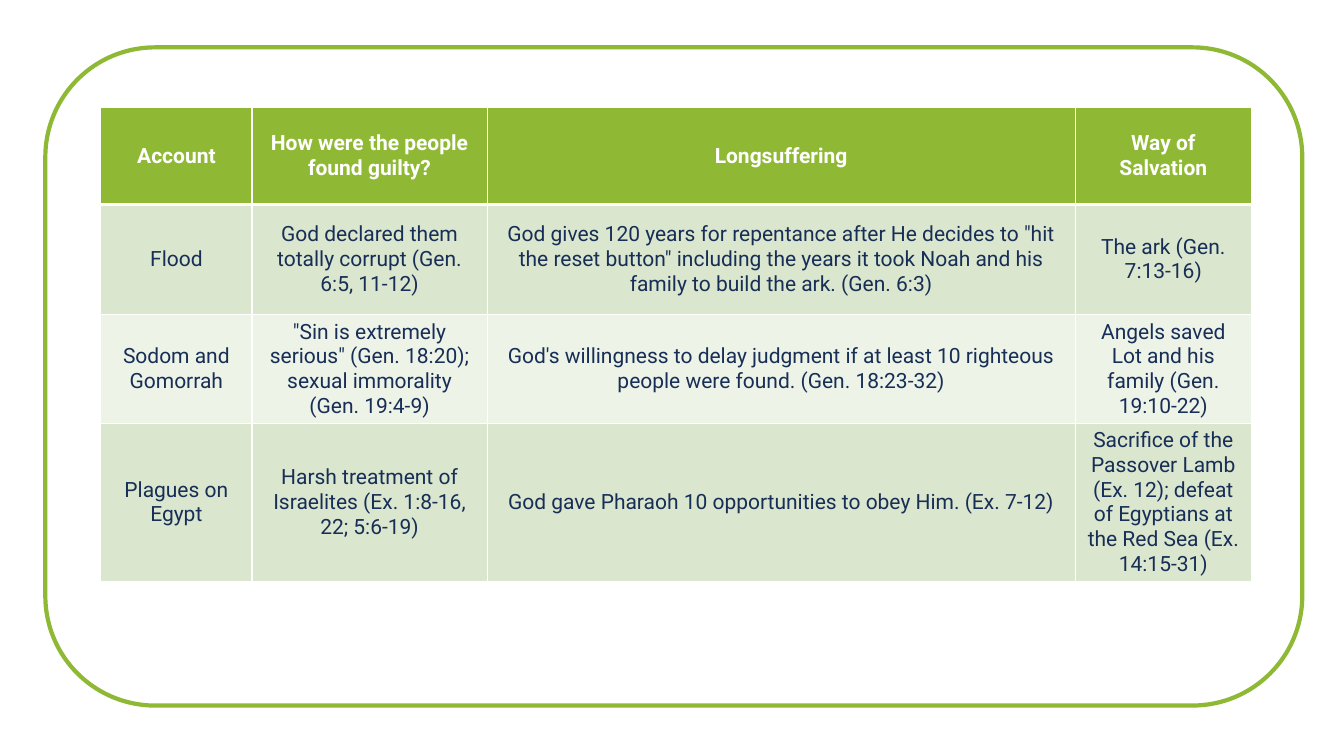
from dataclasses import dataclass

from lxml.etree import SubElement
from pptx import Presentation
from pptx.dml.color import RGBColor
from pptx.enum.shapes import MSO_SHAPE
from pptx.enum.text import MSO_ANCHOR, PP_ALIGN
from pptx.oxml.ns import qn
from pptx.util import Inches, Length, Pt

GREEN, NAVY, WHITE = "8FB935", "172E56", "FFFFFF"
SAGE, MIST = "DBE6CE", "EEF3E8"
FONT, SIZE = "Roboto", 15
COLS = (18, 28, 70, 21)


@dataclass(frozen=True)
class Row:
    height: float
    fill: str
    texts: tuple[str, ...]
    color: str = NAVY
    bold: bool = False
    gap: int = 0
    top: int = 1
    bottom: int = 1


ROWS = (
    Row(11.5, GREEN, (
        "Account",
        "How were the people found guilty?",
        "Longsuffering",
        "Way of Salvation",
    ), color=WHITE, bold=True, bottom=3),
    Row(13.1, SAGE, (
        "Flood",
        "God declared them totally corrupt (Gen. 6:5, 11-12)",
        'God gives 120 years for repentance after He decides to "hit the reset button" '
        "including the years it took Noah and his family to build the ark. (Gen. 6:3)",
        "The ark (Gen. 7:13-16)",
    ), gap=6, top=3),
    Row(10.2, MIST, (
        "Sodom and Gomorrah",
        '"Sin is extremely serious" (Gen. 18:20); sexual immorality (Gen. 19:4-9)',
        "God's willingness to delay judgment if at least 10 righteous people were found. "
        "(Gen. 18:23-32)",
        "Angels saved Lot and his family (Gen. 19:10-22)",
    ), gap=6),
    Row(10.2, SAGE, (
        "Plagues on Egypt",
        "Harsh treatment of Israelites (Ex. 1:8-16, 22; 5:6-19)",
        "God gave Pharaoh 10 opportunities to obey Him. (Ex. 7-12)",
        "Sacrifice of the Passover Lamb (Ex. 12); defeat of Egyptians at the Red Sea "
        "(Ex. 14:15-31)",
    )),
)


def grid(units: float) -> Length:
    """Turn grid units, twelve to the inch, into a length."""
    return Inches(units / 12)


def paint(target, color: str) -> None:
    """Give a fill or a line format a solid colour."""
    fill = getattr(target, "fill", target)
    fill.solid()
    fill.fore_color.rgb = RGBColor.from_string(color)


def add_frame(slide) -> None:
    frame = slide.shapes.add_shape(
        MSO_SHAPE.ROUNDED_RECTANGLE, grid(5.4), grid(5.64), grid(149.64), grid(78.36))
    frame.shadow.inherit = False
    frame.fill.background()
    paint(frame.line, GREEN)
    frame.line.width = Pt(3)


def add_edges(cell, row: Row) -> None:
    props = cell._tc.get_or_add_tcPr()
    widths = {"lnL": 1, "lnR": 1, "lnT": row.top, "lnB": row.bottom}
    for side, width in widths.items():
        edge = SubElement(props, qn(f"a:{side}"), w=str(Pt(width)))
        solid = SubElement(edge, qn("a:solidFill"))
        SubElement(solid, qn("a:srgbClr"), val=WHITE)


def fill_cell(cell, text: str, row: Row) -> None:
    add_edges(cell, row)
    paint(cell.fill, row.fill)
    cell.vertical_anchor = MSO_ANCHOR.MIDDLE
    para = cell.text_frame.paragraphs[0]
    para.alignment = PP_ALIGN.CENTER
    para.space_before = para.space_after = Pt(row.gap)
    run = para.add_run()
    run.text = text
    run.font.name = FONT
    run.font.size = Pt(SIZE)
    run.font.bold = row.bold
    paint(run.font, row.color)


def add_chart_of_accounts(slide) -> None:
    height = grid(57)
    holder = slide.shapes.add_table(
        len(ROWS), len(COLS), grid(12), grid(12.84), grid(sum(COLS)), height)
    table = holder.table
    table.horz_banding = False
    for column, width in zip(table.columns, COLS):
        column.width = grid(width)
    for line, row in zip(table.rows, ROWS):
        line.height = grid(row.height)
        for cell, text in zip(line.cells, row.texts):
            fill_cell(cell, text, row)
    holder.height = height


def main() -> None:
    deck = Presentation()
    deck.slide_width, deck.slide_height = grid(160), grid(90)
    slide = deck.slides.add_slide(deck.slide_layouts[6])
    paint(slide.background, WHITE)
    add_frame(slide)
    add_chart_of_accounts(slide)
    deck.save("out.pptx")


if __name__ == "__main__":
    main()
